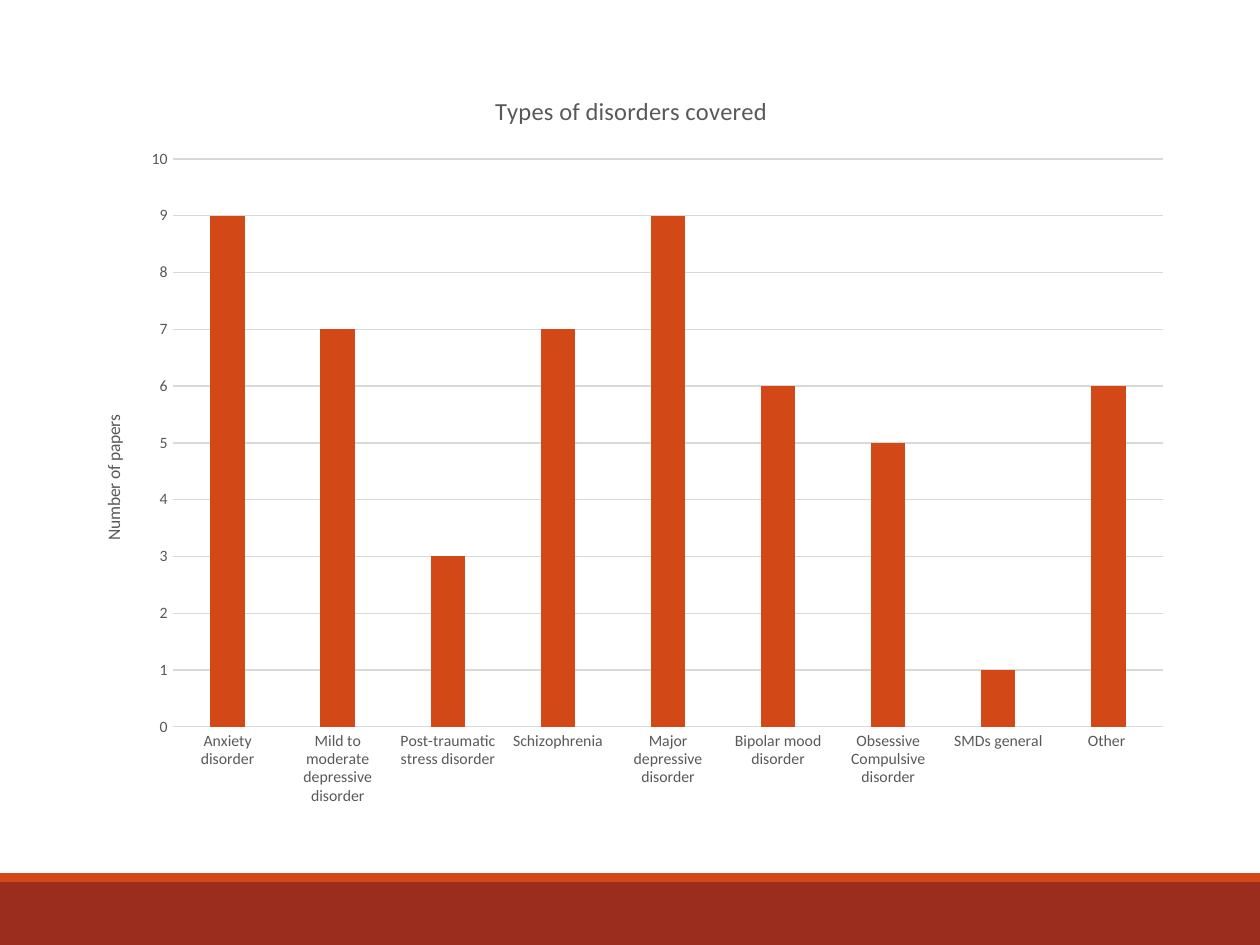
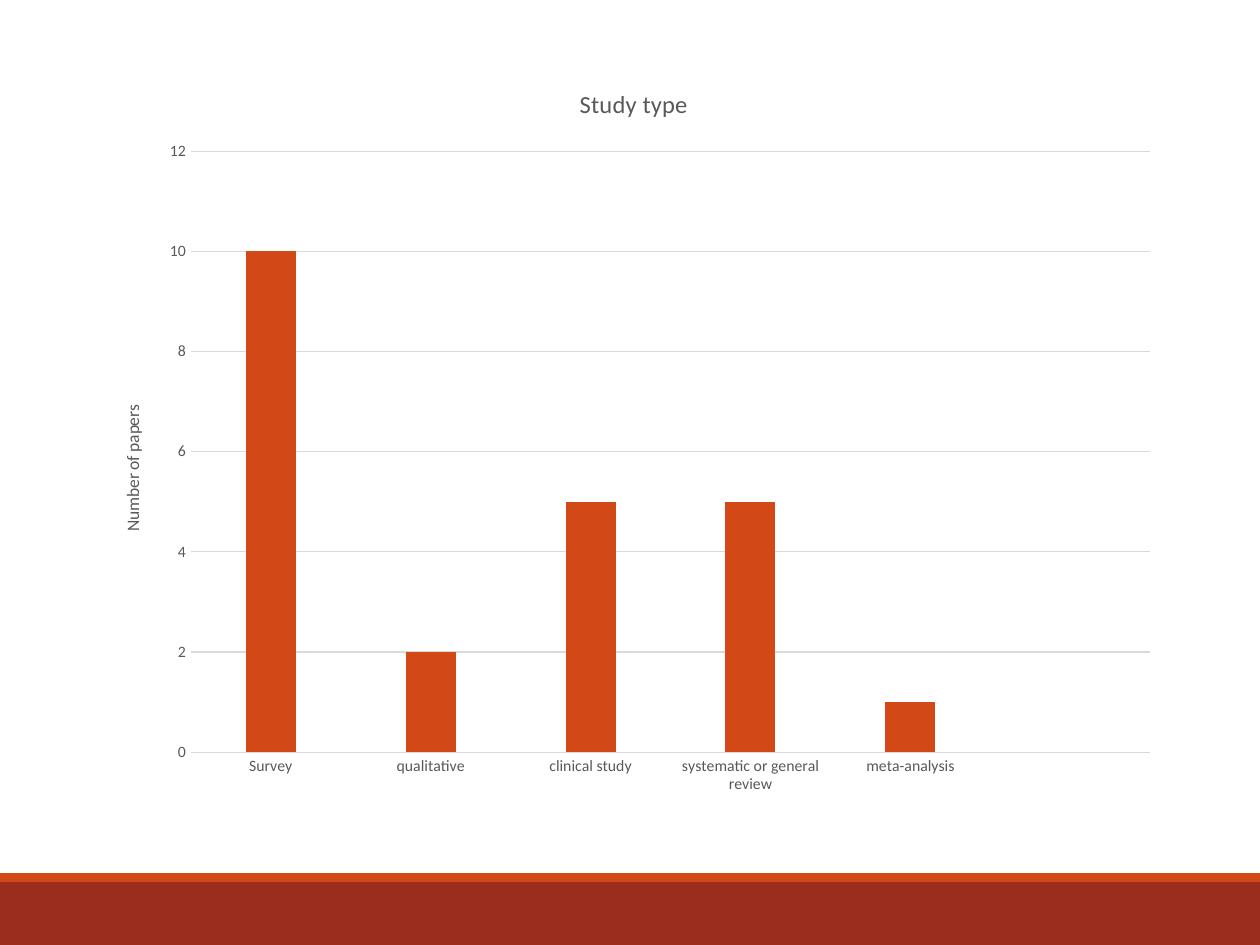
import pptx
import pptx.chart.data
import pptx.dml.color
import pptx.enum.chart
import pptx.enum.shapes
import pptx.util
from dataclasses import dataclass

Inches = pptx.util.Inches
Pt = pptx.util.Pt
rgb = pptx.dml.color.RGBColor.from_string


@dataclass(frozen=True)
class Theme:
    font: str = "Calibri"
    band: str = "9B2D1F"
    accent: str = "D34817"
    text: str = "595959"
    grid: str = "D9D9D9"
    title_size: float = 14
    axis_title_size: float = 10
    label_size: float = 9
    line_width: float = 0.75


THEME = Theme()
SLIDE_WIDTH, SLIDE_HEIGHT = 10, 7.5
# top, height, colour
FOOTER_BANDS = [(7, 0.5, THEME.band), (6.93, 0.07, THEME.accent)]
VALUE_TITLE = "Number of papers"

CHARTS = [
    {
        "title": "Types of disorders covered",
        "place": (0.61, 0.54, 8.8, 5.97),
        "scale": (10, 1),
        "papers": [
            ("Anxiety disorder", 9),
            ("Mild to moderate depressive disorder", 7),
            ("Post-traumatic stress disorder", 3),
            ("Schizophrenia", 7),
            ("Major depressive disorder", 9),
            ("Bipolar mood disorder", 6),
            ("Obsessive Compulsive disorder", 5),
            ("SMDs general", 1),
            ("Other ", 6),
        ],
    },
    {
        "title": "Study type",
        "place": (0.76, 0.48, 8.54, 5.94),
        "scale": (12, 2),
        "papers": [
            ("Survey", 10),
            ("qualitative", 2),
            ("clinical study", 5),
            ("systematic or general review", 5),
            ("meta-analysis", 1),
            ("", None),
        ],
    },
]


def style_font(font, size):
    font.name = THEME.font
    font.size = Pt(size)
    font.bold = False
    font.color.rgb = rgb(THEME.text)


def style_line(line):
    line.color.rgb = rgb(THEME.grid)
    line.width = Pt(THEME.line_width)


def set_title(owner, text, size):
    """Title a chart or an axis."""
    frame = (owner.chart_title if hasattr(owner, "chart_title") else owner.axis_title).text_frame
    frame.text = text
    style_font(frame.paragraphs[0].font, size)


def add_footer(page):
    for top, height, color in FOOTER_BANDS:
        band = page.shapes.add_shape(
            pptx.enum.shapes.MSO_SHAPE.RECTANGLE,
            0, Inches(top), Inches(SLIDE_WIDTH), Inches(height))
        band.shadow.inherit = False
        band.fill.solid()
        band.fill.fore_color.rgb = rgb(color)
        band.line.fill.background()


def style_axes(chart, maximum, step):
    for axis in (chart.category_axis, chart.value_axis):
        axis.major_tick_mark = pptx.enum.chart.XL_TICK_MARK.NONE
        axis.minor_tick_mark = pptx.enum.chart.XL_TICK_MARK.NONE
        style_font(axis.tick_labels.font, THEME.label_size)
    style_line(chart.category_axis.format.line)

    values = chart.value_axis
    values.minimum_scale, values.maximum_scale, values.major_unit = 0, maximum, step
    values.format.line.fill.background()
    style_line(values.major_gridlines.format.line)
    set_title(values, VALUE_TITLE, THEME.axis_title_size)


def add_column_chart(page, content):
    labels, counts = zip(*content["papers"])
    data = pptx.chart.data.CategoryChartData()
    data.categories = labels
    data.add_series("Series 1", counts)
    chart = page.shapes.add_chart(
        pptx.enum.chart.XL_CHART_TYPE.COLUMN_CLUSTERED,
        *map(Inches, content["place"]), data).chart
    chart.has_legend = False
    chart.font.name = THEME.font
    chart.font.size = Pt(THEME.axis_title_size)
    set_title(chart, content["title"], THEME.title_size)
    style_axes(chart, *content["scale"])

    plot = chart.plots[0]
    plot.gap_width, plot.overlap = 219, -27
    plot.vary_by_categories = False
    columns = plot.series[0]
    columns.invert_if_negative = False
    columns.format.fill.solid()
    columns.format.fill.fore_color.rgb = rgb(THEME.accent)


def main():
    deck = pptx.Presentation()
    deck.slide_width = Inches(SLIDE_WIDTH)
    deck.slide_height = Inches(SLIDE_HEIGHT)
    blank = deck.slide_layouts.get_by_name("Blank")
    for content in CHARTS:
        page = deck.slides.add_slide(blank)
        add_footer(page)
        add_column_chart(page, content)
    deck.save("out.pptx")


if __name__ == "__main__":
    main()
